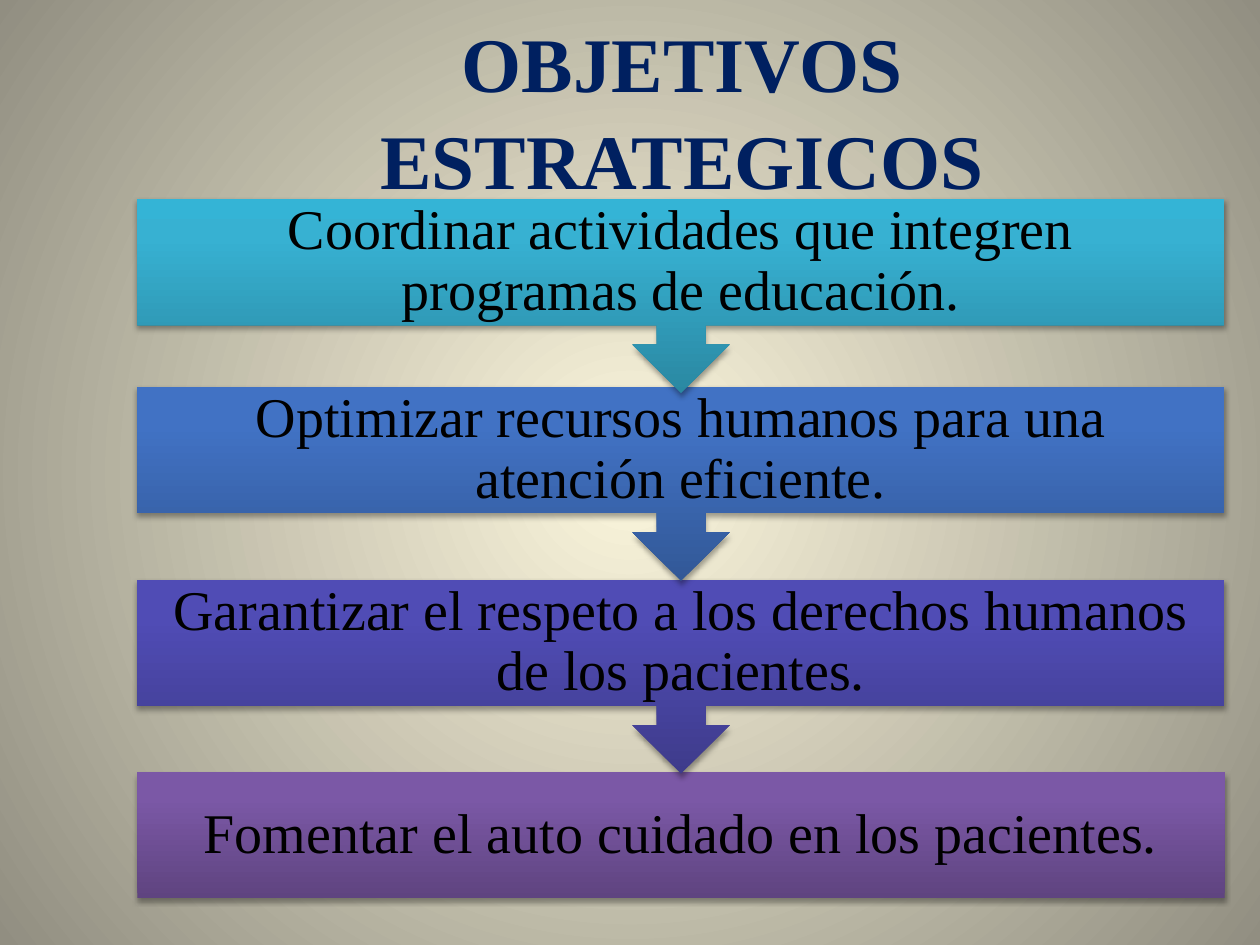
from lxml import etree
from pptx import Presentation
from pptx.dml.color import RGBColor as RGB
from pptx.enum.shapes import MSO_SHAPE as SHAPE
from pptx.enum.text import MSO_ANCHOR as ANCHOR, PP_ALIGN as ALIGN
from pptx.oxml import parse_xml
from pptx.oxml.ns import nsdecls, qn
from pptx.util import Inches, Pt

COLORS = {
    "title": "002060", "text": "000000", "shadow": "000000",
    "center": "FCF7DD", "edge": "918E81",
    "cyan": ("2A88A2", "37B1D2", "34B4D6"),
    "blue": ("325897", "4172C4", "3F72C7"),
    "indigo": ("3E3B8B", "504CB5", "4F4BB8"),
    "purple": ("5F4480", "7B58A6", "7C57A8"),
}
FONT = "Times New Roman"
LEFT, WIDTH, BAR, CALLOUT = 0.109, 0.863, 1 / 7.5, 1.54 / 7.5
STEPS = [
    (1.58, "cyan", "Coordinar actividades que integren programas de educación."),
    (3.07, "blue", "Optimizar recursos humanos para una atención eficiente."),
    (4.6, "indigo", "Garantizar el respeto a los derechos humanos de los pacientes."),
    (6.13, "purple", "Fomentar el auto cuidado en los pacientes."),
]


class Deck:
    """Holds the style and the current slide; lengths are shares of the slide."""

    def __init__(self, width, height):
        self.prs = Presentation()
        self.prs.slide_width, self.prs.slide_height = Inches(width), Inches(height)
        self.s = self.prs.slides.add_slide(self.prs.slide_layouts[6])

    def box(self, x, y, w, h):
        W, H = self.prs.slide_width, self.prs.slide_height
        return round(x * W), round(y * H), round(w * W), round(h * H)

    def gradient(self, fill, parent, stops, shade):
        fill.gradient()
        old = parent.find(qn("a:gradFill"))
        gs = "".join(f'<a:gs pos="{pos * 1000}"><a:srgbClr val="{color}"/></a:gs>'
                     for pos, color in stops)
        new = parse_xml(f'<a:gradFill {nsdecls("a")} rotWithShape="0">'
                        f'<a:gsLst>{gs}</a:gsLst>{shade}</a:gradFill>')
        parent.replace(old, new)

    def background(self, center, edge):
        fill = self.s.background.fill
        fill.gradient()
        parent = self.s.element.find(".//" + qn("p:bgPr"))
        shade = ('<a:path path="circle"><a:fillToRect l="50000" t="50000" '
                 'r="50000" b="50000"/></a:path>')
        self.gradient(fill, parent, [(0, center), (100, edge)], shade)

    def shape(self, kind, x, y, w, h, colors, rotation=0):
        sp = self.s.shapes.add_shape(kind, *self.box(x, y, w, h))
        sp.rotation = rotation
        sp.line.fill.background()
        sp.shadow.inherit = False
        props = sp.element.spPr
        self.gradient(sp.fill, props, zip((0, 80, 100), colors),
                      '<a:lin ang="16200000" scaled="0"/>')
        shadow = etree.SubElement(props.find(qn("a:effectLst")), qn("a:outerShdw"),
                                  blurRad=str(Pt(3.1)), dist=str(Pt(1.8)),
                                  dir="5400000", rotWithShape="0")
        color = etree.SubElement(shadow, qn("a:srgbClr"), val=COLORS["shadow"])
        etree.SubElement(color, qn("a:alpha"), val="35000")

    def text(self, x, y, w, h, lines, size, color, bold=False, spacing=0.9,
             insets=(0.25, 0.25, 0.25, 0.25)):
        tf = self.s.shapes.add_textbox(*self.box(x, y, w, h)).text_frame
        tf.word_wrap, tf.vertical_anchor = True, ANCHOR.MIDDLE
        (tf.margin_left, tf.margin_top,
         tf.margin_right, tf.margin_bottom) = map(Inches, insets)
        p = tf.paragraphs[0]
        p.alignment, p.line_spacing = ALIGN.CENTER, spacing
        for i, line in enumerate(lines):
            if i:
                p.add_line_break()
            r = p.add_run()
            r.text = line
            r.font.name, r.font.size, r.font.bold = FONT, Pt(size), bold
            r.font.color.rgb = RGB.from_string(color)


def main():
    deck = Deck(10, 7.5)
    deck.background(COLORS["center"], COLORS["edge"])
    deck.text(0.102, 0.04, 0.879, 0.137, ["OBJETIVOS", "ESTRATEGICOS"], 44.1,
              COLORS["title"], bold=True, spacing=1.04, insets=(0.1, 0.14, 0.1, 0.05))
    for top, hue, label in reversed(STEPS):
        y = top / 7.5
        if label == STEPS[-1][2]:
            deck.shape(SHAPE.RECTANGLE, LEFT, y, WIDTH, BAR, COLORS[hue])
        else:
            deck.shape(SHAPE.UP_ARROW_CALLOUT, LEFT, y, WIDTH, CALLOUT, COLORS[hue], 180)
        deck.text(LEFT, y, WIDTH, BAR, [label], 32, COLORS["text"])
    deck.prs.save("out.pptx")


if __name__ == "__main__":
    main()
